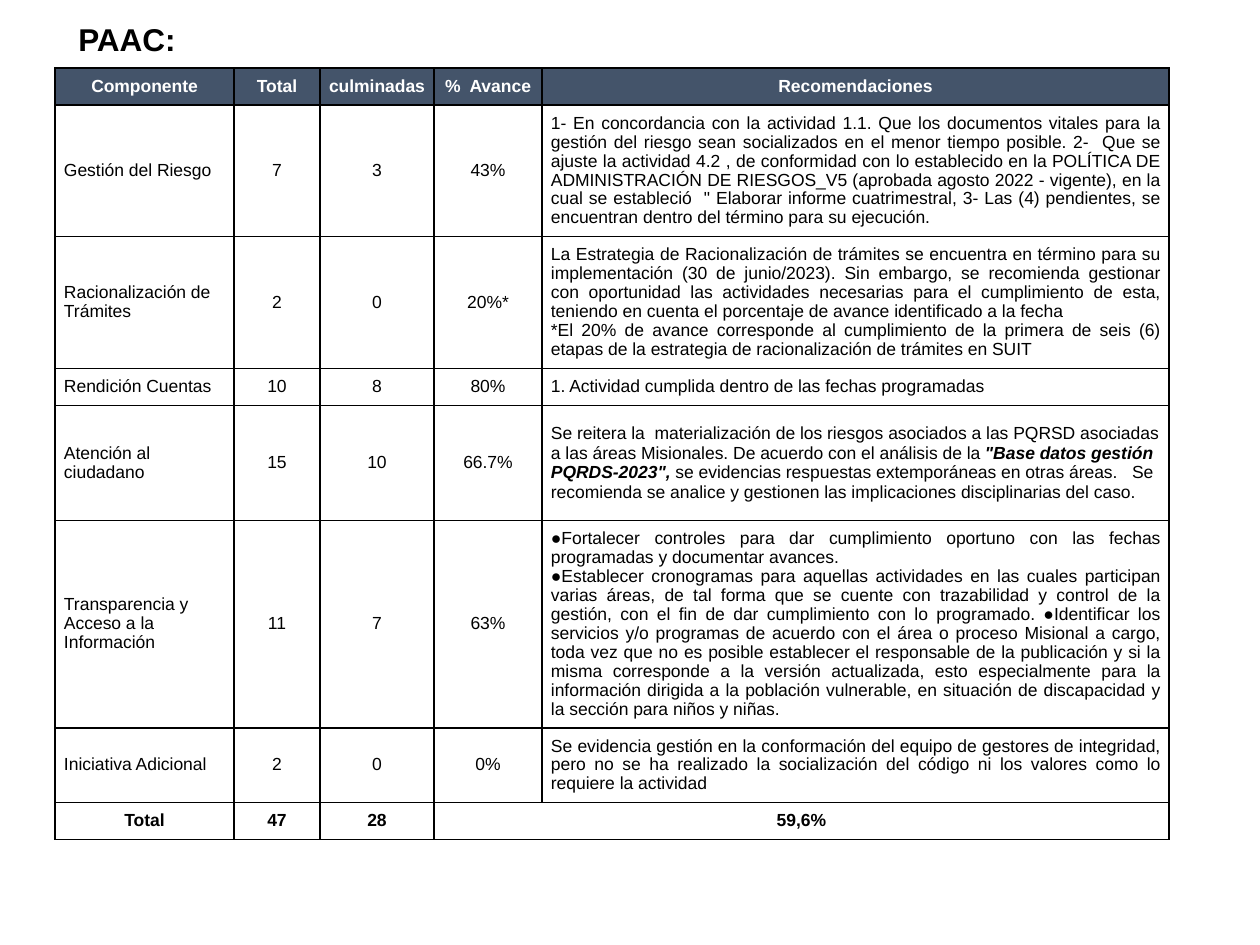
from dataclasses import dataclass

from lxml import etree
from pptx import Presentation
from pptx import util as u
from pptx.dml.color import RGBColor
from pptx.enum import text
from pptx.oxml import ns

PX = 914400 / 126


@dataclass(frozen=True)
class Theme:
    font: str = "Arial"
    ink: str = "000000"
    paper: str = "FFFFFF"
    header: str = "44546A"
    title_size: int = 18
    body_size: int = 10
    title_spacing: float = 0.9
    table_spacing: float = 0.97
    space_after: int = 8


THEME = Theme()
ALIGN = text.PP_ALIGN

TITLE = "PAAC:"
TITLE_BOX = (55, 14, 144, 54)
TABLE_LEFT, TABLE_TOP = 55, 68
COLUMN_WIDTHS = [179, 86, 114, 108, 627]
ROW_HEIGHTS = [36, 131, 131, 37, 115, 207, 74, 37]
CELL_INSET = 9
PROGRESS_INSET = 1
PROGRESS_COLUMN = 3

HEADER = ["Componente", "Total", "culminadas", "%  Avance", "Recomendaciones"]
COMPONENTS = [
    ("Gestión del Riesgo", "7", "3", "43%", [
        "1- En concordancia con la actividad 1.1. Que los documentos vitales para la gestión del riesgo "
        "sean socializados en el menor tiempo posible. 2-  Que se ajuste la actividad 4.2 , de conformidad "
        "con lo establecido en la POLÍTICA DE ADMINISTRACIÓN DE RIESGOS_V5 (aprobada agosto 2022 - vigente), "
        "en la cual se estableció  \" Elaborar informe cuatrimestral, 3- Las (4) pendientes, se encuentran "
        "dentro del término para su ejecución.",
    ]),
    ("Racionalización de Trámites", "2", "0", "20%*", [
        "La Estrategia de Racionalización de trámites se encuentra en término para su implementación "
        "(30 de junio/2023). Sin embargo, se recomienda gestionar con oportunidad las actividades necesarias "
        "para el cumplimiento de esta, teniendo en cuenta el porcentaje de avance identificado a la fecha",
        "*El 20% de avance corresponde al cumplimiento de la primera de seis (6) etapas de la estrategia de "
        "racionalización de trámites en SUIT",
    ]),
    ("Rendición Cuentas", "10", "8", "80%", [
        "1. Actividad cumplida dentro de las fechas programadas",
    ]),
    ("Atención al ciudadano", "15", "10", "66.7%", [
        [
            ("Se reitera la  materialización de los riesgos asociados a las PQRSD asociadas a las áreas "
             "Misionales. De acuerdo con el análisis de la ", False),
            ("\"Base datos gestión PQRDS-2023\",", True),
            (" se evidencias respuestas extemporáneas en otras áreas.   Se recomienda se analice y "
             "gestionen las implicaciones disciplinarias del caso.", False),
        ],
    ]),
    ("Transparencia y Acceso a la Información", "11", "7", "63%", [
        "●Fortalecer controles para dar cumplimiento oportuno con las fechas programadas y documentar avances.",
        "●Establecer cronogramas para aquellas actividades en las cuales participan varias áreas, de tal forma "
        "que se cuente con trazabilidad y control de la gestión, con el fin de dar cumplimiento con lo "
        "programado. ●Identificar los servicios y/o programas de acuerdo con el área o proceso Misional a "
        "cargo, toda vez que no es posible establecer el responsable de la publicación y si la misma "
        "corresponde a la versión actualizada, esto especialmente para la información dirigida a la población "
        "vulnerable, en situación de discapacidad y la sección para niños y niñas.",
    ]),
    ("Iniciativa Adicional", "2", "0", "0%", [
        "Se evidencia gestión en la conformación del equipo de gestores de integridad, pero no se ha realizado "
        "la socialización del código ni los valores como lo requiere la actividad",
    ]),
]
TOTALS = ["Total", "47", "28", "59,6%"]


def px(length):
    return u.Emu(round(length * PX))


def add_span(para, words, size, color=THEME.ink, bold=False, italic=False):
    span = para.add_run()
    span.text = words
    font = span.font
    font.name, font.size = THEME.font, u.Pt(size)
    font.bold, font.italic = bold, italic
    font.color.rgb = RGBColor.from_string(color)


def add_borders(cell):
    properties = cell._tc.get_or_add_tcPr()
    for position, side in enumerate(("lnL", "lnR", "lnT", "lnB")):
        line = etree.Element(ns.qn(f"a:{side}"), w=str(u.Pt(1)))
        fill = etree.SubElement(line, ns.qn("a:solidFill"))
        etree.SubElement(fill, ns.qn("a:srgbClr"), val=THEME.ink)
        properties.insert(position, line)


def style_cell(cell, column, fill):
    inset = px(PROGRESS_INSET if column == PROGRESS_COLUMN else CELL_INSET)
    cell.margin_left = cell.margin_right = inset
    cell.margin_top = cell.margin_bottom = inset
    cell.vertical_anchor = text.MSO_ANCHOR.MIDDLE
    cell.fill.solid()
    cell.fill.fore_color.rgb = RGBColor.from_string(fill)
    add_borders(cell)


def write_label(cell, words, align=ALIGN.CENTER, color=THEME.ink, bold=False):
    para = cell.text_frame.paragraphs[0]
    para.alignment = align
    para.line_spacing = THEME.table_spacing
    para.space_after = u.Pt(THEME.space_after)
    add_span(para, words, THEME.body_size, color, bold)


def write_advice(cell, paragraphs):
    frame = cell.text_frame
    for index, content in enumerate(paragraphs):
        para = frame.add_paragraph() if index else frame.paragraphs[0]
        if isinstance(content, str):
            para.alignment = ALIGN.JUSTIFY
            para.line_spacing = THEME.table_spacing
            content = [(content, False)]
        else:
            para.alignment = ALIGN.LEFT
        for words, strong in content:
            add_span(para, words, THEME.body_size, bold=strong, italic=strong)


def add_title(page):
    box = page.shapes.title
    box.left, box.top, box.width, box.height = map(px, TITLE_BOX)
    frame = box.text_frame
    frame.word_wrap = True
    frame.auto_size = text.MSO_AUTO_SIZE.NONE
    frame.vertical_anchor = text.MSO_ANCHOR.MIDDLE
    para = frame.paragraphs[0]
    para.alignment = ALIGN.CENTER
    para.line_spacing = THEME.title_spacing
    add_span(para, TITLE, THEME.title_size, bold=True)


def add_progress_table(page):
    frame = page.shapes.add_table(
        len(ROW_HEIGHTS), len(COLUMN_WIDTHS), px(TABLE_LEFT), px(TABLE_TOP),
        px(sum(COLUMN_WIDTHS)), px(sum(ROW_HEIGHTS)))
    table = frame.table
    table.first_row = table.horz_banding = False
    for column, width in zip(table.columns, COLUMN_WIDTHS):
        column.width = px(width)
    for row, height in zip(table.rows, ROW_HEIGHTS):
        row.height = px(height)

    for r in range(len(ROW_HEIGHTS)):
        for c in range(len(COLUMN_WIDTHS)):
            style_cell(table.cell(r, c), c, THEME.paper if r else THEME.header)

    for c, words in enumerate(HEADER):
        write_label(table.cell(0, c), words, color=THEME.paper, bold=True)
    for r, (*labels, advice) in enumerate(COMPONENTS, start=1):
        for c, words in enumerate(labels):
            write_label(table.cell(r, c), words, ALIGN.CENTER if c else ALIGN.LEFT)
        write_advice(table.cell(r, len(labels)), advice)

    last = len(ROW_HEIGHTS) - 1
    table.cell(last, PROGRESS_COLUMN).merge(table.cell(last, PROGRESS_COLUMN + 1))
    for c, words in enumerate(TOTALS):
        write_label(table.cell(last, c), words, bold=True)


def main():
    deck = Presentation()
    deck.slide_width, deck.slide_height = px(1260), px(945)
    page = deck.slides.add_slide(deck.slide_layouts[5])
    add_title(page)
    add_progress_table(page)
    deck.save("out.pptx")


if __name__ == "__main__":
    main()
